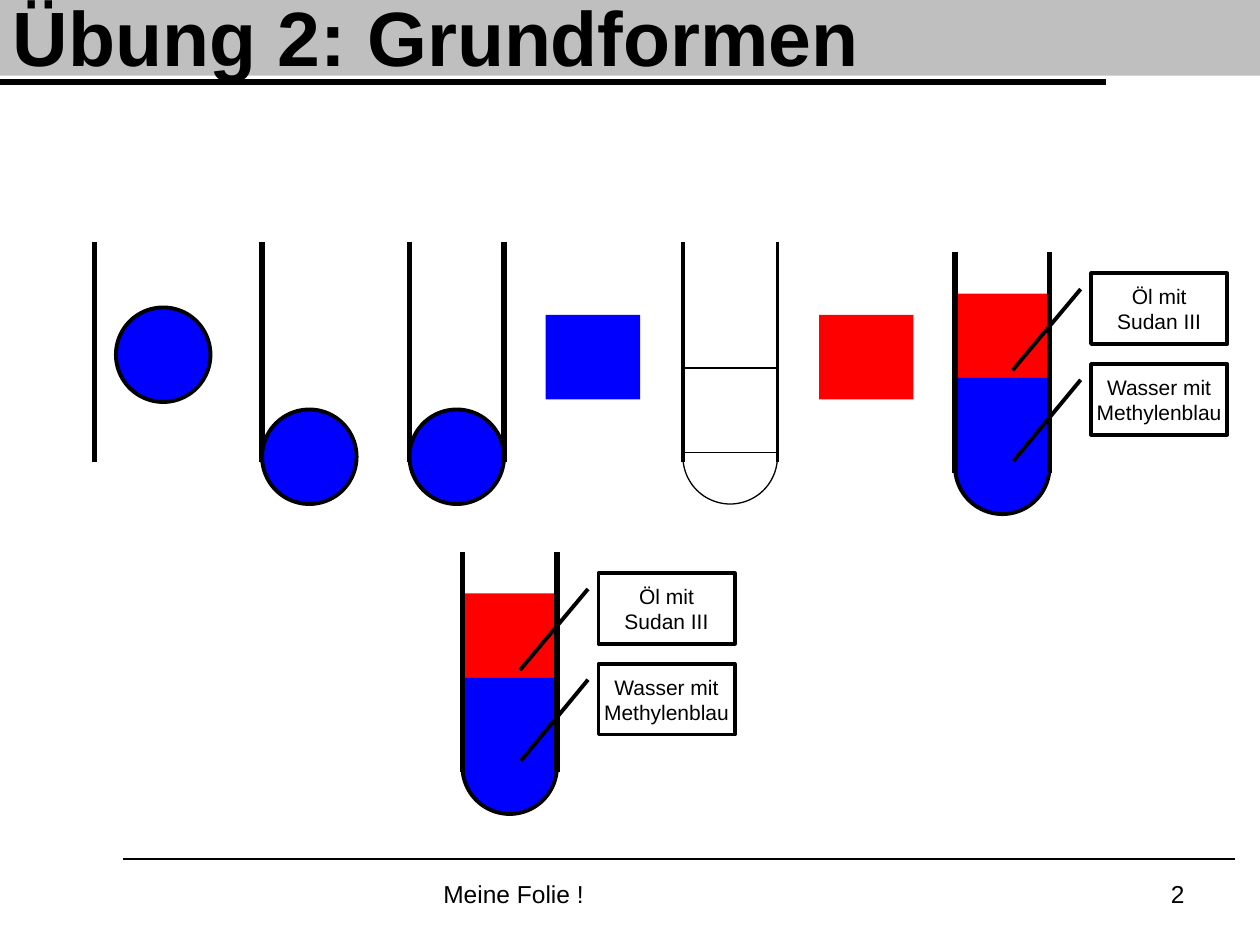
from pptx import Presentation
from pptx.dml.color import RGBColor
from pptx.enum.shapes import MSO_CONNECTOR, MSO_SHAPE
from pptx.enum.text import MSO_ANCHOR, PP_ALIGN
from pptx.oxml.ns import qn
from pptx.util import Inches, Pt
from lxml.etree import SubElement

# Content
TITLE = "Übung 2: Grundformen"
FOOTER = [  # text, left, width, alignment
    ("Meine Folie !", 3.42, 3.17, PP_ALIGN.LEFT),
    ("2", 7.17, 2.33, PP_ALIGN.RIGHT),
]
LABELS = [  # lines, offset below the tube's top, end of the pointer
    (["Öl mit", "Sudan III"], 0.17, -0.578),
    (["Wasser mit", "Methylenblau"], 0.89, -0.571),
]
COLORS = {"black": "000000", "gray": "BFBFBF", "white": "FFFFFF",
          "blue": "0000FF", "red": "FF0000"}

# Tube measures, with offsets from its top
WIDE, WALL, FILL = 0.75, 1.75, 0.67
OIL, WATER, BOWL = 0.33, 1, 1.33
TOP = 1.92


def color(name):
    return RGBColor.from_string(COLORS[name])


def line(shapes, x1, y1, x2, y2, width=3):
    item = shapes.add_connector(MSO_CONNECTOR.STRAIGHT, Inches(x1), Inches(y1),
                                Inches(x2), Inches(y2))
    item.line.color.rgb = color("black")
    item.line.width = Pt(width)
    SubElement(item._element.spPr, qn("a:effectLst"))


def shape(shapes, kind, x, y, w, h, fill=None, width=None):
    item = shapes.add_shape(kind, Inches(x), Inches(y), Inches(w), Inches(h))
    item.shadow.inherit = False
    if fill:
        item.fill.solid()
        item.fill.fore_color.rgb = color(fill)
    else:
        item.fill.background()
    if width is None:
        item.line.fill.background()
    else:
        item.line.color.rgb = color("black")
        item.line.width = Pt(width)
    return item


def write(para, text, size, bold=False, align=None):
    para.alignment = align
    run = para.add_run()
    run.text = text
    run.font.name = "Arial"
    run.font.size = Pt(size)
    run.font.bold = bold
    run.font.color.rgb = color("black")


def wall(shapes, x, y, width=3):
    line(shapes, x, y, x, y + WALL, width)


def bowl(shapes, x, y, fill="blue", width=2.25):
    shape(shapes, MSO_SHAPE.OVAL, x, y, WIDE, WIDE, fill, width)


def block(shapes, x, y, fill, width=None):
    shape(shapes, MSO_SHAPE.RECTANGLE, x, y, WIDE, FILL, fill, width)


def labels(shapes, x, y):
    for lines, down, end in LABELS:
        box = shape(shapes, MSO_SHAPE.LINE_CALLOUT_1, x + 1.08, y + down,
                    1.08, 0.56, width=2.25)
        for i, value in enumerate((0.223, -0.077, 1.375, end)):
            box.adjustments[i] = value
        frame = box.text_frame
        frame.word_wrap = True
        frame.vertical_anchor = MSO_ANCHOR.MIDDLE
        frame.margin_left = frame.margin_right = 0
        for i, text in enumerate(lines):
            para = frame.add_paragraph() if i else frame.paragraphs[0]
            write(para, text, 12, align=PP_ALIGN.CENTER)


def tube(shapes, x, y):
    block(shapes, x, y + OIL, "red")
    bowl(shapes, x, y + BOWL)
    block(shapes, x, y + WATER, "blue")
    for side in (x, x + WIDE):
        wall(shapes, side, y)


def main():
    deck = Presentation()
    deck.slide_width, deck.slide_height = Inches(10), Inches(7.5)
    slide = deck.slides.add_slide(deck.slide_layouts[5])
    shapes = slide.shapes

    def group():
        return shapes.add_group_shape().shapes

    # Title bar and rules
    title = shapes.title
    title.left, title.top = Inches(0), Inches(-0.03)
    title.width, title.height = Inches(10), Inches(0.63)
    title.fill.solid()
    title.fill.fore_color.rgb = color("gray")
    title.text_frame.vertical_anchor = MSO_ANCHOR.MIDDLE
    write(title.text_frame.paragraphs[0], TITLE, 44, True, PP_ALIGN.LEFT)
    line(shapes, -0.04, 0.65, 8.78, 0.65)
    line(shapes, 0.98, 6.82, 9.8, 6.82, 1)

    # Footer
    for text, x, w, align in FOOTER:
        box = shapes.add_textbox(Inches(x), Inches(6.93), Inches(w), Inches(0.52))
        box.text_frame.word_wrap = True
        write(box.text_frame.paragraphs[0], text, 14, align=align)

    # Single parts: wall, bowl and two fillings
    wall(shapes, 0.75, TOP)
    bowl(shapes, 0.92, 2.44)
    block(shapes, 4.33, 2.5, "blue")
    block(shapes, 6.5, 2.5, "red")

    # Bowl with one wall, then with two
    part = group()
    wall(part, 2.08, TOP)
    bowl(part, 2.08, TOP + BOWL)
    part = group()
    wall(part, 3.25, TOP)
    bowl(part, 3.25, TOP + BOWL)
    wall(part, 3.25 + WIDE, TOP)

    # Tube in outline
    part = group()
    bowl(part, 5.42, TOP + BOWL, "white", 0)
    block(part, 5.42, TOP + WATER, "white", 0)
    for x in (5.42, 5.42 + WIDE):
        wall(part, x, TOP, 0)

    # Filled tubes with labels, the second one as a single group
    tube(group(), 7.58, 2)
    labels(shapes, 7.58, 2)
    part = group()
    tube(part, 3.67, 4.38)
    labels(part, 3.67, 4.38)

    deck.save("out.pptx")


if __name__ == "__main__":
    main()
